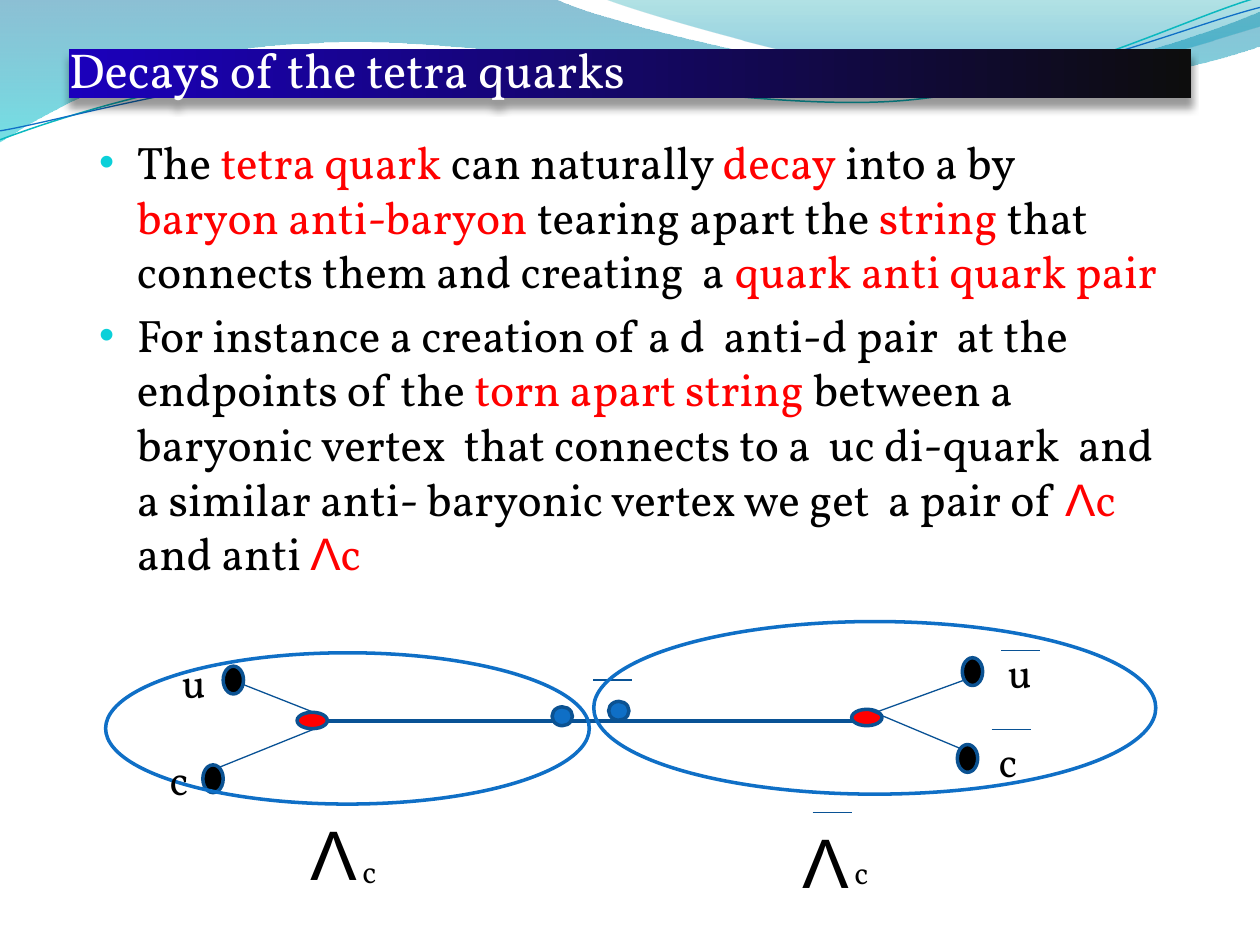
import pptx
import pptx.util
import pptx.dml.color
import pptx.enum.shapes
import pptx.enum.text
import pptx.oxml
import pptx.oxml.ns
from dataclasses import dataclass


@dataclass(frozen=True)
class Theme:
    serif: str = "Vollkorn"
    symbol: str = "Arial"
    text: str = "000000"
    accent: str = "FF0000"
    light: str = "FFFFFF"
    blue: str = "0F6FC6"
    outline: str = "0B5292"
    strand: str = "095295"
    teal: str = "0AB8BF"
    bullet: str = "0BD0D9"
    title_size: int = 28
    body_size: int = 26
    quark_size: int = 24
    lambda_size: int = 40
    subscript_size: int = 18


theme = Theme()
Cm, Pt = pptx.util.Cm, pptx.util.Pt
OVAL = pptx.enum.shapes.MSO_SHAPE.OVAL
ANCHOR = pptx.enum.text.MSO_ANCHOR

title = "Decays of the tetra quarks"
title_gradient = [(0, "1B00BC", 100), (100, "0D0D0D", 100)]
points = [
    [("The ", ""), ("tetra quark ", "red"), ("can naturally ", ""), ("decay", "red"),
     (" into a by ", ""), ("baryon anti-baryon ", "red"), ("tearing apart the ", ""),
     ("string", "red"), (" that connects them and creating  a ", ""),
     ("quark anti quark pair", "red")],
    [("For instance a creation of a d  anti-d pair  at the endpoints of the ", ""),
     ("torn apart string ", "red"),
     ("between a baryonic vertex  that connects to a  uc di-quark  and "
      "a similar anti- baryonic vertex we get  a pair of ", ""),
     ("Λ", "symbol"), ("c", "red"), (" and anti ", ""), ("Λ", "symbol"), ("c", "red")],
]

wave_bands = [
    ((-0.03, -0.03, 25.45, 2.9),
     [(0, 0), (11.18, -0.03), (12.09, 0.43, 16.87, 1.6, 19.25, 1.6),
      (21.79, 1.6, 24.33, 0.66, 25.4, 0.23), (25.43, 0.91),
      (24.97, 1.12, 22.1, 1.93, 18.95, 1.91), (15.8, 1.91, 9.7, 0.71, 6.53, 0.86),
      (3.28, 0.91, 1.17, 2.11, -0.03, 2.87), (0, 0)],
     [(0, "0074A1", 45), (100, "00C6CF", 55)]),
    ((12.17, -0.03, 13.23, 1.78),
     [(12.17, -0.03), (12.93, 0.28, 17.32, 1.57, 19.53, 1.65),
      (21.74, 1.75, 24.41, 0.81, 25.4, 0.53), (25.4, 0), (12.17, -0.03)],
     [(0, "00A1A9", 30), (80, "008BBF", 45)]),
]
ripple_rotation = 357.3
ripples = [
    ((-0.05, 0.56, 25.45, 1.8),
     [(-0.05, 2.22), (1.19, 1.82, 4.02, 1.04, 7.05, 1.05),
      (10.05, 1.07, 15.02, 2.37, 18.08, 2.29), (21.13, 2.2, 23.87, 0.91, 25.41, 0.55)],
     theme.teal, 0.85),
    ((-0.05, 0.76, 25.48, 1.47),
     [(-0.04, 2.04), (1.16, 1.9, 4.18, 1.15, 7.2, 1.16),
      (10.25, 1.18, 15.13, 2.25, 18.18, 2.17), (21.21, 2.1, 23.93, 1.06, 25.45, 0.75)],
     theme.blue, 0.75),
]

string = (6.3, 14.53, 17.3, 14.53)
vertices = [(5.99, 14.36), (17.17, 14.3)]
legs = [(17.68, 14.35, 19.41, 13.72), (17.48, 14.3, 19.41, 15.11),
        (6.3, 14.35, 4.5, 13.64), (6.3, 14.71, 4.29, 15.52)]
quarks = [(19.4, 13.26), (19.3, 15.01), (4.5, 13.43), (4.09, 15.42)]
created_pair = [(11.13, 14.25), (12.27, 14.14)]
baryons = [(2.13, 13.16, 9.75, 3.05), (11.97, 12.53, 11.33, 3.48)]
antiparticle_bars = [(20.18, 13.11), (19.99, 14.7), (11.96, 13.71), (16.38, 16.38)]
bar_length = 0.79
labels = [
    ("u", (3.41, 13.11, 0.99, 1.27), theme.serif, theme.quark_size),
    ("u", (20.06, 12.9, 0.99, 1.27), theme.serif, theme.quark_size),
    ("c", (3.14, 15.06, 0.91, 1.27), theme.serif, theme.quark_size),
    ("c", (19.85, 14.71, 0.91, 1.27), theme.serif, theme.quark_size),
    ("Λ", (7.01, 16.37, 10.36, 1.96), theme.symbol, theme.lambda_size),
    ("Λ", (5.96, 16.21, 1.5, 1.96), theme.symbol, theme.lambda_size),
    ("c", (7.03, 17.05, 0.81, 1.02), theme.serif, theme.subscript_size),
    ("c", (16.95, 17.07, 0.81, 1.02), theme.serif, theme.subscript_size),
]


def rgb(color):
    return pptx.dml.color.RGBColor.from_string(color)


def element(xml):
    return pptx.oxml.parse_xml(xml.replace(" ", f" {pptx.oxml.ns.nsdecls('a')} ", 1))


def stroke(line, color, width):
    line.color.rgb = rgb(color)
    line.width = Pt(width)


def shade(fill, stops, angle):
    fill.gradient()
    fill.gradient_angle = angle
    for stop, (position, color, opacity) in zip(fill.gradient_stops, stops):
        stop.position = position / 100
        stop.color.rgb = rgb(color)
        if opacity < 100:
            tint = stop._gs.find(pptx.oxml.ns.qn("a:srgbClr"))
            tint.append(element(f'<a:alpha val="{opacity * 1000}"/>'))


def add_wave(shapes, box, segments, closed):
    left, top, width, height = map(Cm, box)
    ends = [(Cm(segment[-2]), Cm(segment[-1])) for segment in segments]
    builder = shapes.build_freeform(*ends[0])
    builder.add_line_segments(ends[1:], close=False)
    wave = builder.convert_to_shape()
    wave.left, wave.top, wave.width, wave.height = left, top, width, height
    wave.shadow.inherit = False
    steps = []
    for number, segment in enumerate(segments):
        command = "cubicBezTo" if len(segment) == 6 else "lnTo" if number else "moveTo"
        spots = "".join(f'<a:pt x="{Cm(x) - left}" y="{Cm(y) - top}"/>'
                        for x, y in zip(segment[::2], segment[1::2]))
        steps.append(f"<a:{command}>{spots}</a:{command}>")
    outline = wave._element.spPr.find(".//" + pptx.oxml.ns.qn("a:path"))
    outline.getparent().replace(outline, element(
        f'<a:path w="{width}" h="{height}">{"".join(steps)}'
        f'{"<a:close/>" if closed else ""}</a:path>'))
    return wave


def add_oval(shapes, box, fill, line):
    oval = shapes.add_shape(OVAL, *map(Cm, box))
    oval.shadow.inherit = False
    if fill:
        oval.fill.solid()
        oval.fill.fore_color.rgb = rgb(fill)
    else:
        oval.fill.background()
    stroke(oval.line, line, 2)


def add_ovals(shapes, spots, size, fill):
    for spot in spots:
        add_oval(shapes, spot + size, fill, theme.outline)


def add_strand(shapes, ends, width=0.75):
    strand = shapes.add_connector(pptx.enum.shapes.MSO_CONNECTOR.STRAIGHT, *map(Cm, ends))
    stroke(strand.line, theme.strand, width)
    strand._element.spPr.append(element("<a:effectLst />"))


def add_run(paragraph, text, font, size, color):
    run = paragraph.add_run()
    run.text = text
    run.font.name = font
    run.font.size = Pt(size)
    run.font.color.rgb = rgb(color)


def add_title(shapes):
    banner = shapes.add_shape(pptx.enum.shapes.MSO_SHAPE.RECTANGLE,
                              Cm(1.39), Cm(0.99), Cm(22.63), Cm(0.99))
    shade(banner.fill, title_gradient, 0)
    banner.line.fill.background()
    banner.shadow.inherit = False
    banner._element.spPr.find(pptx.oxml.ns.qn("a:effectLst")).append(element(
        '<a:outerShdw blurRad="50800" dist="63500" dir="5400000" algn="t" rotWithShape="0">'
        '<a:srgbClr val="000000"><a:alpha val="40000"/></a:srgbClr></a:outerShdw>'))
    frame = banner.text_frame
    frame.word_wrap = True
    frame.vertical_anchor = ANCHOR.BOTTOM
    frame.margin_left = frame.margin_right = frame.margin_bottom = 0
    frame.paragraphs[0].alignment = pptx.enum.text.PP_ALIGN.LEFT
    add_run(frame.paragraphs[0], title, theme.serif, theme.title_size, theme.light)


def add_points(shapes):
    frame = shapes.add_textbox(Cm(1.75), Cm(2.58), Cm(21.87), Cm(16.13)).text_frame
    frame.word_wrap = True
    for number, point in enumerate(points):
        paragraph = frame.add_paragraph() if number else frame.paragraphs[0]
        properties = paragraph._p.get_or_add_pPr()
        properties.set("marL", str(Cm(0.76)))
        properties.set("indent", str(-Cm(0.76)))
        for xml in (f'<a:buClr ><a:srgbClr val="{theme.bullet}"/></a:buClr>',
                    '<a:buSzPct val="95000"/>',
                    f'<a:buFont typeface="{theme.symbol}"/>', '<a:buChar char="•"/>'):
            properties.append(element(xml))
        if number:
            paragraph.space_before = Pt(theme.body_size * 0.2)
        for text, style in point:
            add_run(paragraph, text, theme.symbol if style == "symbol" else theme.serif,
                    theme.body_size, theme.accent if style else theme.text)


def add_label(shapes, text, box, font, size):
    frame = shapes.add_textbox(*map(Cm, box)).text_frame
    frame.word_wrap = font == theme.symbol
    frame.paragraphs[0].alignment = pptx.enum.text.PP_ALIGN.RIGHT
    add_run(frame.paragraphs[0], text, font, size, theme.text)


def main():
    deck = pptx.Presentation()
    deck.slide_width, deck.slide_height = Cm(25.4), Cm(19.05)
    shapes = deck.slides.add_slide(deck.slide_layouts[6]).shapes
    for box, segments, stops in wave_bands:
        band = add_wave(shapes, box, segments, True)
        shade(band.fill, stops, 270)
        band.line.fill.background()
    for box, segments, color, width in ripples:
        ripple = add_wave(shapes, box, segments, False)
        ripple.rotation = ripple_rotation
        ripple.fill.background()
        stroke(ripple.line, color, width)
    add_title(shapes)
    add_points(shapes)
    add_strand(shapes, string, 2.25)
    add_ovals(shapes, vertices, (0.61, 0.33), theme.accent)
    for leg in legs:
        add_strand(shapes, leg)
    add_ovals(shapes, quarks, (0.41, 0.56), theme.text)
    for x, y in antiparticle_bars:
        add_strand(shapes, (x, y, x + bar_length, y))
    add_ovals(shapes, created_pair, (0.41, 0.38), theme.blue)
    for baryon in baryons:
        add_oval(shapes, baryon, None, theme.blue)
    for label in labels:
        add_label(shapes, *label)
    deck.save("out.pptx")


if __name__ == "__main__":
    main()
